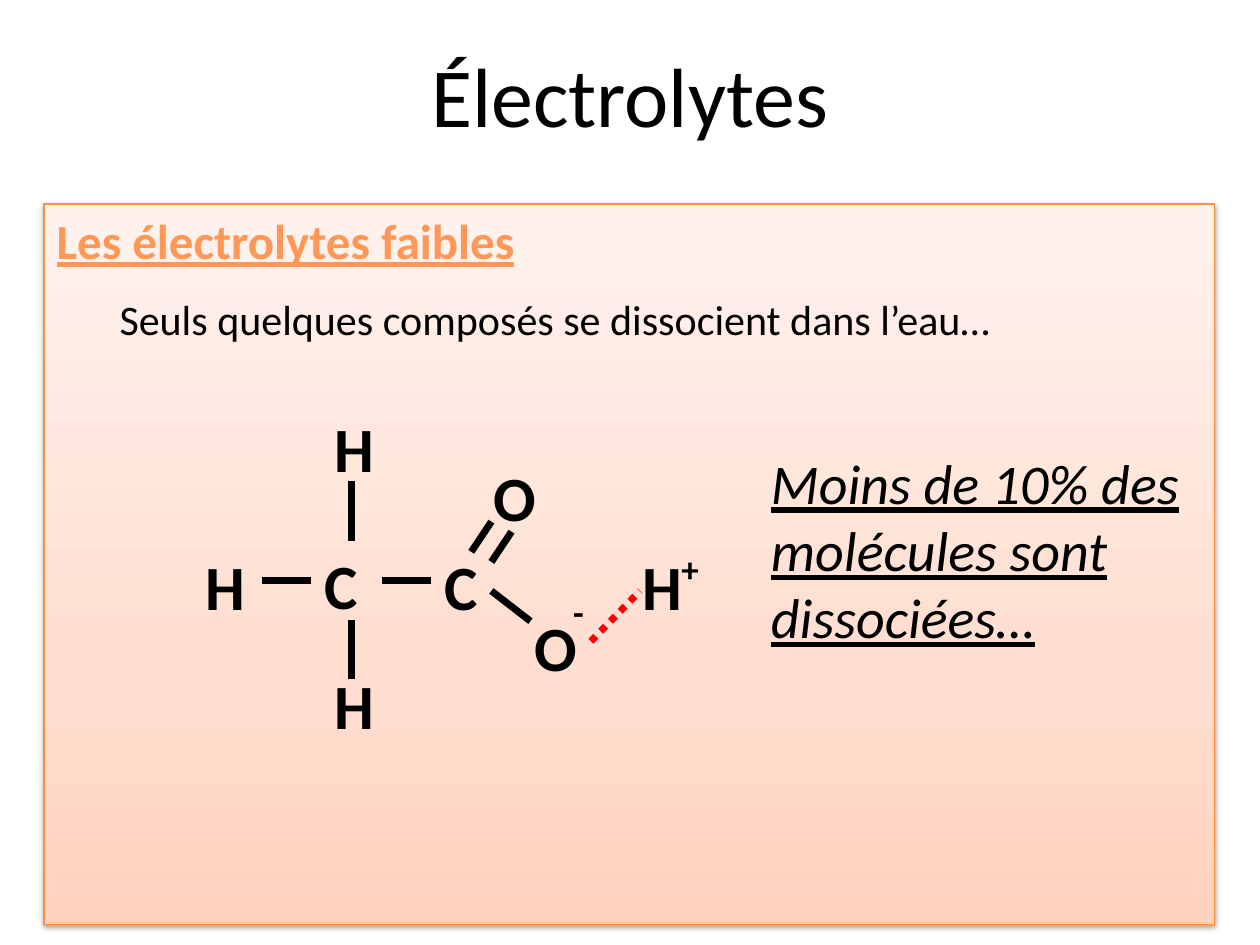
from lxml import etree
from pptx import Presentation
from pptx.dml.color import RGBColor
from pptx.enum.dml import MSO_LINE
from pptx.enum.shapes import MSO_CONNECTOR, MSO_SHAPE
from pptx.enum.text import MSO_ANCHOR, PP_ALIGN
from pptx.oxml.ns import qn
from pptx.util import Inches, Pt

RECTANGLE = MSO_SHAPE.RECTANGLE
STRAIGHT = MSO_CONNECTOR.STRAIGHT
DOTTED = MSO_LINE.ROUND_DOT
TOP = MSO_ANCHOR.TOP
LEFT, CENTER = PP_ALIGN.LEFT, PP_ALIGN.CENTER

COLORS = {
    "ink": "000000",
    "heading": "FF9856",
    "border": "F69240",
    "panel_dark": "FFD2BD",
    "panel_mid": "FFDED0",
    "panel_light": "FFF2ED",
    "ionic": "FF0000",
}


class SlideBuilder:
    font_name = "Calibri"
    bond_width = Pt(4)

    def __init__(self, slide):
        self.slide = slide

    def color(self, name):
        return RGBColor.from_string(COLORS[name])

    def style(self, paragraph, size, color="ink", align=LEFT, **flags):
        paragraph.alignment = align
        font = paragraph.font
        font.name = self.font_name
        font.size = Pt(size)
        font.color.rgb = self.color(color)
        for flag, value in flags.items():
            setattr(font, flag, value)

    def panel(self, left, top, width, height, stops):
        panel = self.slide.shapes.add_shape(
            RECTANGLE, Inches(left), Inches(top), Inches(width), Inches(height))
        panel.fill.gradient()
        panel.fill.gradient_angle = 90
        properties = panel._element.spPr
        stop_list = properties.find(f".//{qn('a:gsLst')}")
        stop_list.clear()
        for percent, name in stops:
            stop = etree.SubElement(stop_list, qn("a:gs"), pos=str(percent * 1000))
            etree.SubElement(stop, qn("a:srgbClr"), val=COLORS[name])
        panel.line.color.rgb = self.color("border")
        panel.line.width = Pt(0.75)
        effects = etree.SubElement(properties, qn("a:effectLst"))
        shadow = etree.SubElement(
            effects, qn("a:outerShdw"), blurRad=str(Pt(3.1)), dist=str(Pt(1.6)),
            dir="5400000", rotWithShape="0")
        shade = etree.SubElement(shadow, qn("a:srgbClr"), val=COLORS["ink"])
        etree.SubElement(shade, qn("a:alpha"), val="38000")
        frame = panel.text_frame
        frame.word_wrap = True
        frame.vertical_anchor = TOP
        return frame

    def text(self, text, left, top, width, height, size, **style):
        box = self.slide.shapes.add_textbox(
            Inches(left), Inches(top), Inches(width), Inches(height))
        box.text_frame.word_wrap = True
        paragraph = box.text_frame.paragraphs[0]
        paragraph.text = text
        self.style(paragraph, size, **style)

    def atom(self, symbol, left, top):
        self.text(symbol, left, top, 0.86, 0.7, 36, bold=True)

    def charge(self, sign, left, top):
        self.text(sign, left, top, 0.39, 0.44, 20, bold=True)

    def bond(self, x1, y1, x2, y2, color="ink", dash=None):
        bond = self.slide.shapes.add_connector(
            STRAIGHT, Inches(x1), Inches(y1), Inches(x2), Inches(y2))
        bond.line.color.rgb = self.color(color)
        bond.line.width = self.bond_width
        if dash:
            bond.line.dash_style = dash
        etree.SubElement(bond._element.spPr, qn("a:effectLst"))


def main():
    presentation = Presentation()
    presentation.slide_width = Inches(10)
    presentation.slide_height = Inches(7.5)
    builder = SlideBuilder(
        presentation.slides.add_slide(presentation.slide_layouts[6]))

    weak_electrolytes = builder.panel(
        0.35, 1.62, 9.29, 5.72,
        [(0, "panel_dark"), (35, "panel_mid"), (100, "panel_light")])
    heading = weak_electrolytes.paragraphs[0]
    heading.text = "Les électrolytes faibles"
    builder.style(heading, 28, "heading", bold=True, underline=True)
    definition = weak_electrolytes.add_paragraph()
    definition.text = "\tSeuls quelques composés se dissocient dans l’eau…"
    definition.space_before = Pt(14)
    builder.style(definition, 24)

    for y in (3.82, 4.92):
        builder.bond(2.79, y, 2.79, y + 0.47)
    for x in (2.08, 3.03):
        builder.bond(x, 4.61, x + 0.39, 4.61)
    for x, y in ((3.9, 4.22), (3.74, 4.14)):
        builder.bond(x, y + 0.24, x + 0.16, y)
    builder.bond(3.9, 4.69, 4.21, 4.93)
    builder.bond(4.69, 5.09, 5.08, 4.69, "ionic", DOTTED)

    atoms = [
        ("C", 2.48, 4.29), ("C", 3.43, 4.3),
        ("H", 2.56, 3.2), ("H", 1.53, 4.3), ("H", 2.56, 5.24), ("H", 5, 4.3),
        ("O", 4.14, 4.78), ("O", 3.82, 3.59),
    ]
    for symbol, left, top in atoms:
        builder.atom(symbol, left, top)
    builder.charge("-", 4.45, 4.64)
    builder.charge("+", 5.31, 4.3)

    builder.text("Moins de 10% des molécules sont dissociées…",
                 6.02, 3.51, 3.48, 1.72, 32, italic=True, underline=True)
    builder.text("Électrolytes", 0.5, 0.3, 9, 1.25, 48, align=CENTER)

    presentation.save("out.pptx")


if __name__ == "__main__":
    main()
